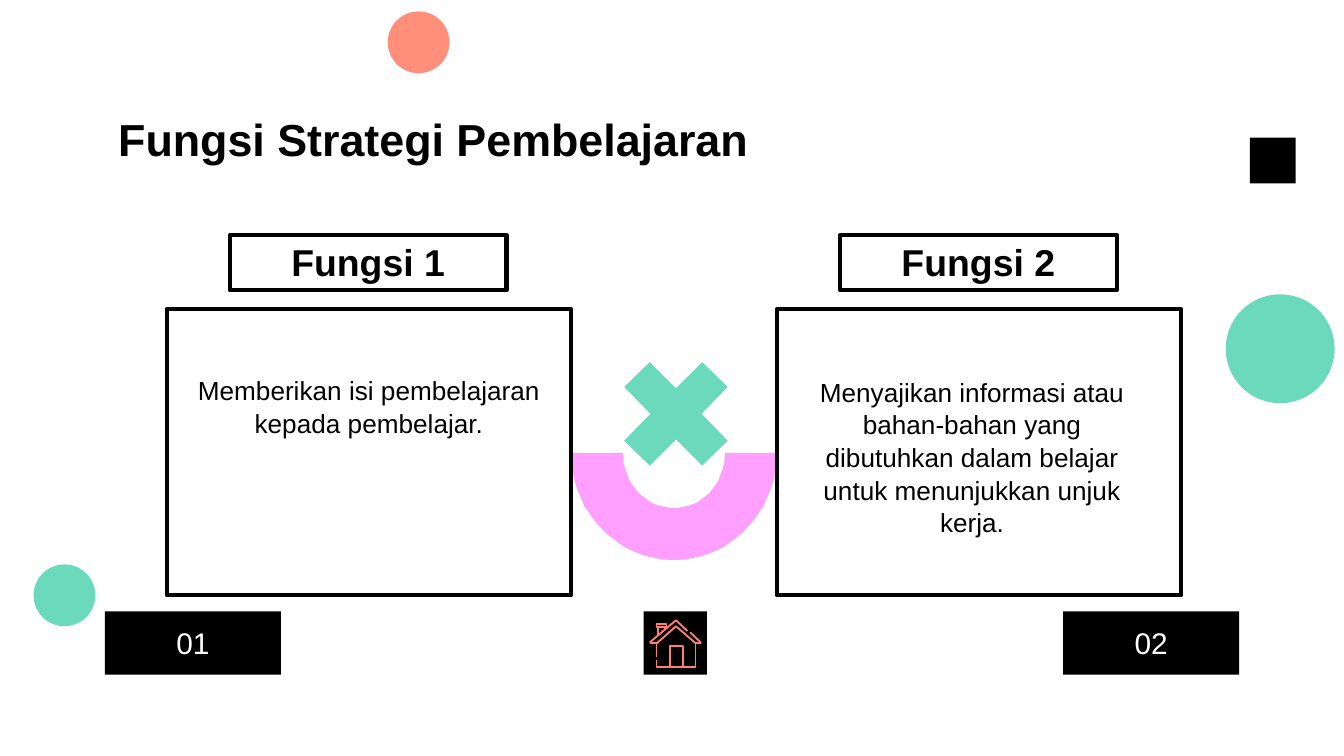
import math
from dataclasses import dataclass

from pptx import Presentation
from pptx.dml.color import RGBColor
from pptx.enum.shapes import MSO_SHAPE
from pptx.enum.text import MSO_ANCHOR, PP_ALIGN
from pptx.util import Pt

EMU_PER_PX = 4572  # 200 px to the inch
RECTANGLE = MSO_SHAPE.RECTANGLE
OVAL = MSO_SHAPE.OVAL
TOP = MSO_ANCHOR.TOP
LEFT = PP_ALIGN.LEFT
CENTER = PP_ALIGN.CENTER
FONT = "Arial"
BLACK, WHITE = "000000", "FFFFFF"
CORAL, GREEN, PINK, ICON = "FF8E7A", "6BD9BB", "FF9FFF", "FF8073"


@dataclass
class Box:
    left: int
    top: int
    width: int
    height: int


@dataclass
class TextStyle:
    size: int
    color: str = BLACK
    bold: bool = False
    align: PP_ALIGN = CENTER
    line_spacing: float = 1.0


@dataclass
class Insets:
    left: int = 0
    top: int = 0
    right: int = 0


@dataclass
class Card:
    left: int
    heading: str
    lines: list[str]
    insets: Insets


def px(length: int) -> int:
    return length * EMU_PER_PX


def rgb(color: str) -> RGBColor:
    return RGBColor.from_string(color)


def paint(shape, fill: str | None, line: str | None = None, width: float = 2.25) -> None:
    shape.shadow.inherit = False
    if fill:
        shape.fill.solid()
        shape.fill.fore_color.rgb = rgb(fill)
    else:
        shape.fill.background()
    if line:
        shape.line.color.rgb = rgb(line)
        shape.line.width = Pt(width)
    else:
        shape.line.fill.background()


def add_preset(slide, kind, box: Box, fill: str | None, line: str | None = None):
    shape = slide.shapes.add_shape(kind, px(box.left), px(box.top), px(box.width), px(box.height))
    paint(shape, fill, line)
    return shape


def write(shape, lines: list[str], style: TextStyle, insets: Insets) -> None:
    frame = shape.text_frame
    frame.word_wrap = True
    frame.vertical_anchor = TOP
    frame.margin_left, frame.margin_right = px(insets.left), px(insets.right)
    frame.margin_top, frame.margin_bottom = px(insets.top), 0
    frame.text = "\n".join(lines)
    for paragraph in frame.paragraphs:
        paragraph.alignment = style.align
        paragraph.line_spacing = style.line_spacing
        for run in paragraph.runs:
            run.font.name = FONT
            run.font.size = Pt(style.size)
            run.font.bold = style.bold
            run.font.color.rgb = rgb(style.color)


def add_outline(slide, contours: list[list[tuple]], close: bool):
    builder = slide.shapes.build_freeform(*contours[0][0], scale=EMU_PER_PX)
    for index, points in enumerate(contours):
        if index:
            builder.move_to(*points[0])
        builder.add_line_segments(points[1:], close=close)
    return builder.convert_to_shape()


def half_ellipse(center: tuple, radii: tuple, steps: int = 48) -> list[tuple]:
    """Lower half, from right to left."""
    angles = [math.pi * step / steps for step in range(steps + 1)]
    return [(round(center[0] + radii[0] * math.cos(angle)),
             round(center[1] + radii[1] * math.sin(angle))) for angle in angles]


def add_card(slide, card: Card) -> None:
    heading = add_preset(slide, RECTANGLE, Box(card.left + 94, 350, 412, 82), None, BLACK)
    write(heading, [card.heading], TextStyle(20, bold=True), Insets(top=6))
    body = add_preset(slide, RECTANGLE, Box(card.left, 460, 602, 426), None, BLACK)
    write(body, card.lines, TextStyle(14, line_spacing=1.04), card.insets)


def add_number(slide, left: int, number: str) -> None:
    plate = add_preset(slide, RECTANGLE, Box(left, 910, 262, 94), BLACK)
    write(plate, [number], TextStyle(16, WHITE), Insets(top=20))


DECORATIONS = [
    (RECTANGLE, Box(1860, 205, 68, 68), BLACK),
    (OVAL, Box(577, 17, 92, 92), CORAL),
    (OVAL, Box(50, 840, 92, 92), GREEN),
    (OVAL, Box(1824, 438, 162, 162), GREEN),
]
CARDS = [
    Card(248, "Fungsi 1", ["Memberikan isi pembelajaran", "kepada pembelajar."],
         Insets(top=96)),
    Card(1156, "Fungsi 2",
         ["Menyajikan informasi atau bahan-bahan yang dibutuhkan dalam belajar "
          "untuk menunjukkan unjuk kerja."],
         Insets(left=58, top=98, right=79)),
]
HOUSE_STROKES = [
    [(967, 956), (1006, 923), (1023, 939)],  # roof
    [(1027, 941), (1043, 956)],
    [(967, 957), (978, 957), (1006, 932), (1035, 957), (1044, 957)],  # eaves
    [(977, 957), (977, 978)],  # walls
    [(977, 982), (977, 993), (1035, 993), (1035, 957)],
    [(997, 992), (997, 962), (1016, 962), (1016, 992)],  # door
    [(977, 929), (992, 929), (992, 933), (977, 933), (977, 929)],  # chimney
    [(979, 934), (979, 946)],
    [(989, 934), (989, 938)],
]


def main() -> None:
    presentation = Presentation()
    presentation.slide_width, presentation.slide_height = px(2000), px(1125)
    slide = presentation.slides.add_slide(presentation.slide_layouts[6])

    # Background decorations
    for kind, box, color in DECORATIONS:
        add_preset(slide, kind, box, color)

    # Title
    title = slide.shapes.add_textbox(px(174), px(164), px(960), px(86))
    write(title, ["Fungsi Strategi Pembelajaran"],
          TextStyle(24, bold=True, align=LEFT), Insets(left=2, top=2))

    # Half ring and cross between the cards
    center = (1003, 674)
    ring = half_ellipse(center, (153, 159)) + half_ellipse(center, (76, 82))[::-1]
    paint(add_outline(slide, [ring], True), PINK)
    cross = [(1045, 539), (1006, 578), (967, 539), (929, 576), (968, 616), (929, 656),
             (967, 693), (1006, 654), (1045, 693), (1083, 656), (1044, 616), (1083, 576)]
    paint(add_outline(slide, [cross], True), GREEN)

    # Cards
    for card in CARDS:
        add_card(slide, card)

    # Number plates and house button
    add_number(slide, 156, "01")
    add_number(slide, 1582, "02")
    add_preset(slide, RECTANGLE, Box(958, 910, 94, 94), BLACK)
    paint(add_outline(slide, HOUSE_STROKES, False), None, ICON, 1)

    presentation.save("out.pptx")


if __name__ == "__main__":
    main()
